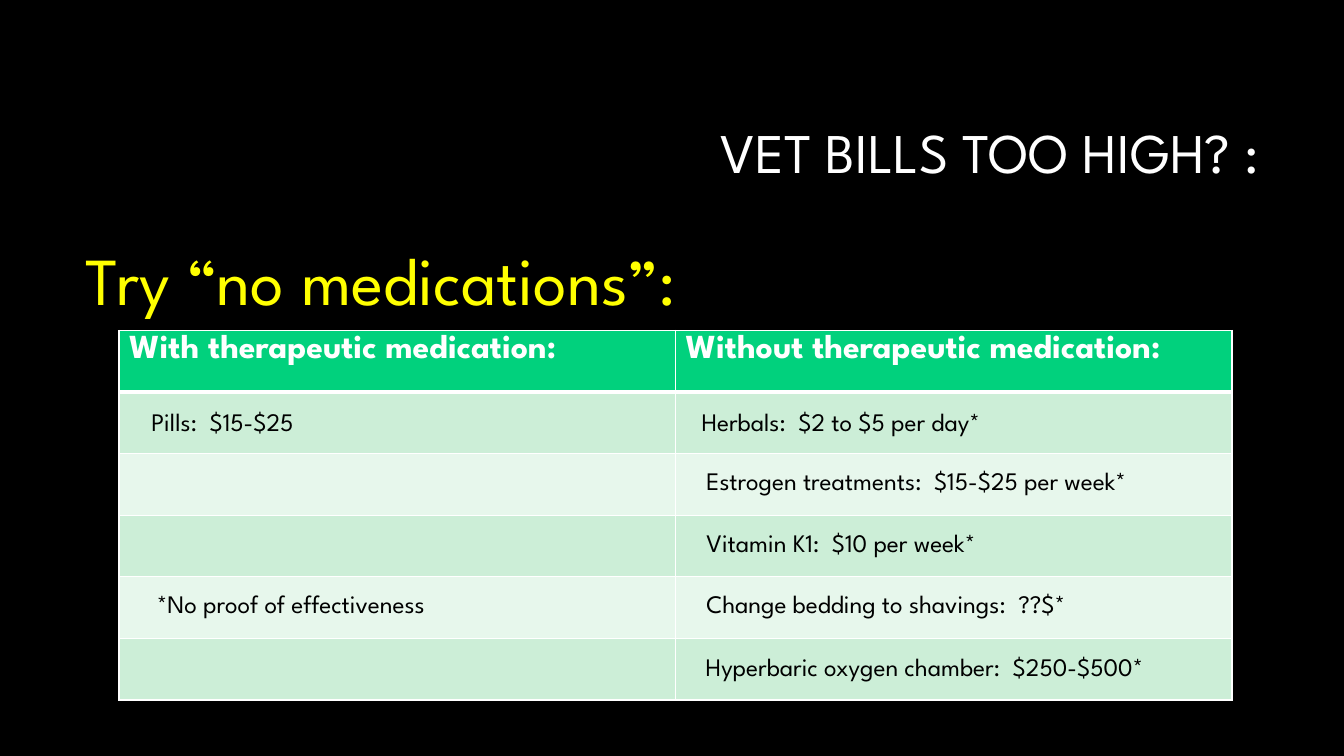
"""Build the slide that compares vet bills with and without medication."""
from lxml import etree
from pptx import Presentation
from pptx.dml.color import RGBColor
from pptx.enum import text
from pptx.oxml import ns
from pptx.util import Pt

FONT = "League Spartan"
BLACK = RGBColor(0x00, 0x00, 0x00)
WHITE = RGBColor(0xFF, 0xFF, 0xFF)
YELLOW = RGBColor(0xFF, 0xFF, 0x00)
HEADER_GREEN = RGBColor(0x01, 0xD1, 0x7D)
BAND_DARK = RGBColor(0xCC, 0xEE, 0xD7)
BAND_LIGHT = RGBColor(0xE7, 0xF7, 0xEC)


def write(paragraph, wording, size, color, bold=False):
    run = paragraph.add_run()
    run.text = wording
    run.font.name = FONT
    run.font.size = Pt(size)
    run.font.bold = bold
    run.font.color.rgb = color


def add_text(left, top, width, height, wording, size, color, wrap):
    box = slide.shapes.add_textbox(Pt(left), Pt(top), Pt(width), Pt(height))
    box.text_frame.word_wrap = wrap
    write(box.text_frame.paragraphs[0], wording, size, color)
    return box.text_frame


presentation = Presentation()
presentation.slide_width = Pt(960)
presentation.slide_height = Pt(540)
slide = presentation.slides.add_slide(presentation.slide_layouts[6])
slide.background.fill.solid()
slide.background.fill.fore_color.rgb = BLACK

title = add_text(228, 60.5, 678.5, 101.5, "VET BILLS TOO HIGH? :", 40, WHITE, True)
title.vertical_anchor = text.MSO_ANCHOR.MIDDLE
title.paragraphs[0].alignment = text.PP_ALIGN.RIGHT
title.paragraphs[0].line_spacing = 0.9

subtitle = add_text(54, 173, 870, 317, "Try “no medications”:", 48, YELLOW, True)
subtitle.paragraphs[0].line_spacing = 0.9

headers = ["With therapeutic medication:", "Without therapeutic medication:"]
row_count = 6
table = slide.shapes.add_table(
    row_count, len(headers), Pt(85), Pt(236), Pt(795), Pt(264)).table
for row_index in range(row_count):
    for column_index, header in enumerate(headers):
        cell = table.cell(row_index, column_index)
        properties = cell._tc.get_or_add_tcPr()
        widths = {"lnL": 1, "lnR": 1,
                  "lnT": 3 if row_index == 1 else 1,
                  "lnB": 3 if row_index == 0 else 1}
        for side, width in widths.items():
            line = etree.SubElement(properties, ns.qn(f"a:{side}"), w=str(Pt(width)))
            line_fill = etree.SubElement(line, ns.qn("a:solidFill"))
            etree.SubElement(line_fill, ns.qn("a:srgbClr"), val=str(WHITE))
        cell.fill.solid()
        if row_index == 0:
            cell.fill.fore_color.rgb = HEADER_GREEN
            write(cell.text_frame.paragraphs[0], header, 24, WHITE, True)
        else:
            cell.fill.fore_color.rgb = BAND_DARK if row_index % 2 else BAND_LIGHT

costs = [
    (101, 287, 137, "Pills:  $15-$25"),
    (494, 287, 245.5, "Herbals:  $2 to $5 per day*"),
    (497.5, 329, 368, "Estrogen treatments:  $15-$25 per week*"),
    (497.5, 373, 248.5, "Vitamin K1:  $10 per week*"),
    (497.5, 417, 327, "Change bedding to shavings:  ??$*"),
    (497, 461.5, 384, "Hyperbaric oxygen chamber:  $250-$500*"),
    (105, 417, 243.5, "*No proof of effectiveness"),
]
for left, top, width, wording in costs:
    frame = add_text(left, top, width, 29, wording, 18, BLACK, False)
    frame.auto_size = text.MSO_AUTO_SIZE.SHAPE_TO_FIT_TEXT

presentation.save("out.pptx")
